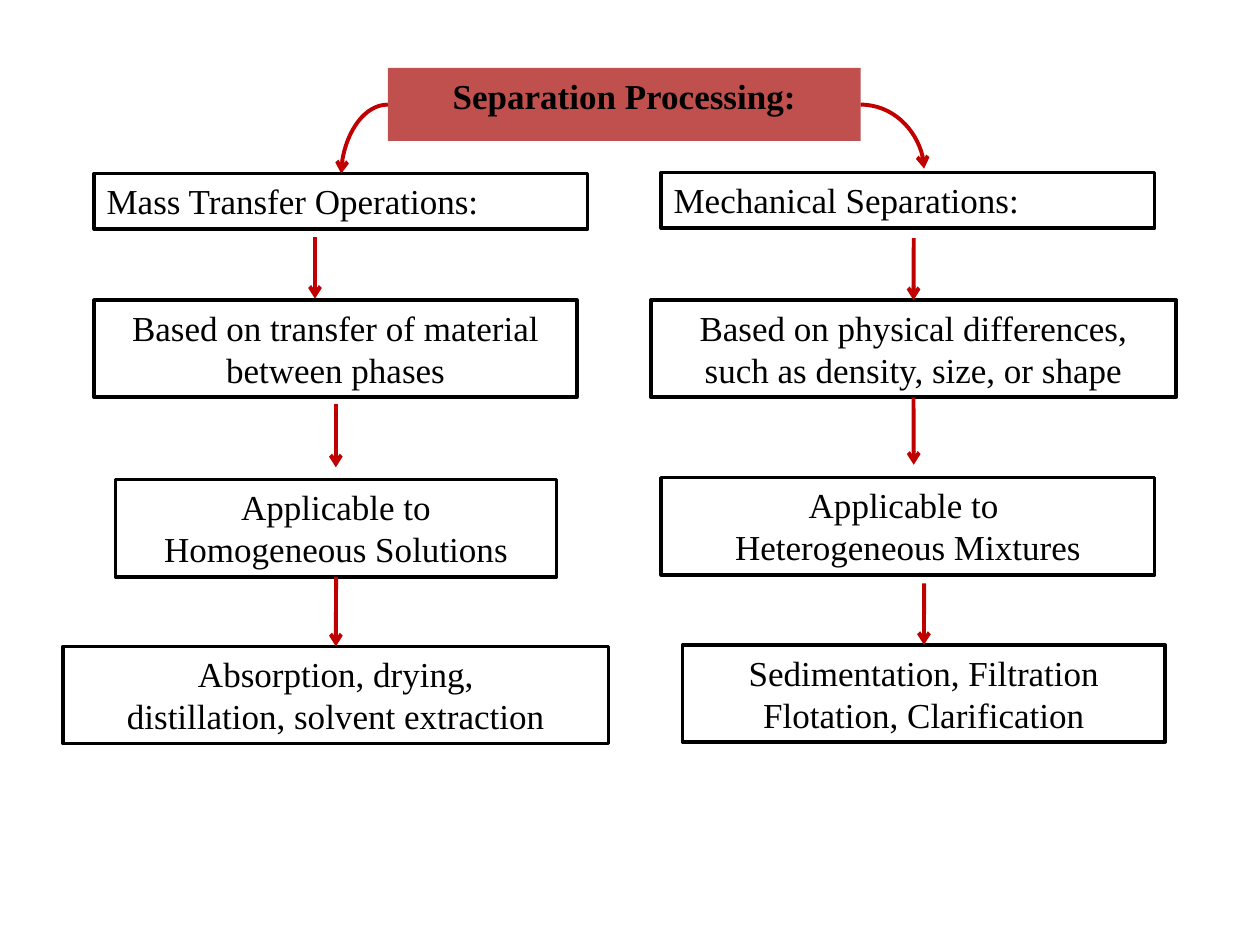
"""Build the separation processing flow chart slide."""
from lxml import etree
from pptx import Presentation
from pptx.dml.color import RGBColor
from pptx.enum.shapes import MSO_CONNECTOR
from pptx.enum.text import MSO_ANCHOR, MSO_AUTO_SIZE, PP_ALIGN
from pptx.oxml.ns import qn
from pptx.util import Cm, Pt

STRAIGHT, CURVE = MSO_CONNECTOR.STRAIGHT, MSO_CONNECTOR.CURVE
LEFT, CENTER = PP_ALIGN.LEFT, PP_ALIGN.CENTER
TOP_SIDE, BOTTOM_SIDE = 0, 2
FONT, SIZE = "Times New Roman", 20
COLORS = {"title": "C0504D", "box": "FFFFFF", "ink": "000000", "arrow": "C00000"}

TITLE = ("Separation Processing:", (7.82, 1.37, 9.53, 1.47))
LINE_HEIGHTS = {1: 1.12, 2: 1.96}

# name: left, top, width, line count, alignment, paragraphs
BOXES = {
    "mass": (1.9, 3.5, 9.95, 1, LEFT, ["Mass Transfer Operations:"]),
    "transfer": (1.9, 6.05, 9.73, 2, CENTER,
                 ["Based on transfer of material between phases"]),
    "homogeneous": (2.33, 9.67, 8.89, 2, CENTER,
                    ["Applicable to", "Homogeneous Solutions"]),
    "absorption": (1.27, 13.03, 11, 2, CENTER,
                   ["Absorption, drying,", "distillation, solvent extraction"]),
    "mechanical": (13.33, 3.48, 9.95, 1, LEFT, ["Mechanical Separations:"]),
    "physical": (13.12, 6.05, 10.59, 2, CENTER,
                 ["Based on physical differences, such as density, size, or shape"]),
    "heterogeneous": (13.33, 9.63, 9.95, 2, CENTER,
                      ["Applicable to ", "Heterogeneous Mixtures"]),
    "sedimentation": (13.76, 13, 9.73, 2, CENTER,
                      ["Sedimentation, Filtration", "Flotation, Clarification"]),
}

CURVES = [(7.82, 2.11, 6.88, 3.5), (17.35, 2.11, 18.63, 3.4)]

# x, top, bottom, box joined at the start, box joined at the end
ARROWS = [
    (6.35, 4.78, 6.02, None, None),
    (6.77, 8.15, 9.42, None, None),
    (6.77, 11.63, 13.03, "homogeneous", "absorption"),
    (18.42, 4.8, 6.05, None, "physical"),
    (18.42, 8.01, 9.37, "physical", None),
    (18.63, 11.76, 13, None, "sedimentation"),
]


def rgb(name):
    return RGBColor.from_string(COLORS[name])


def write(tf, lines, align, bold=False):
    tf.word_wrap = True
    tf.auto_size = MSO_AUTO_SIZE.NONE
    tf.vertical_anchor = MSO_ANCHOR.TOP
    for i, line in enumerate(lines):
        p = tf.add_paragraph() if i else tf.paragraphs[0]
        p.alignment = align
        p.space_before = Pt(0)
        r = p.add_run()
        r.text = line
        r.font.name, r.font.size, r.font.bold = FONT, Pt(SIZE), bold
        r.font.color.rgb = rgb("ink")


def fill(sp, name):
    sp.fill.solid()
    sp.fill.fore_color.rgb = rgb(name)


def add_box(slide, left, top, width, count, align, lines):
    sp = slide.shapes.add_textbox(Cm(left), Cm(top), Cm(width), Cm(LINE_HEIGHTS[count]))
    fill(sp, "box")
    sp.line.color.rgb = rgb("ink")
    sp.line.width = Pt(2)
    write(sp.text_frame, lines, align)
    return sp


def add_arrow(slide, kind, *ends):
    cxn = slide.shapes.add_connector(kind, *map(Cm, ends))
    cxn.line.color.rgb = rgb("arrow")
    cxn.line.width = Pt(2.25)
    etree.SubElement(cxn.line._get_or_add_ln(), qn("a:tailEnd"), type="arrow")
    props = cxn._element.spPr
    etree.SubElement(props, qn("a:effectLst"))
    if kind == CURVE:
        props.find(qn("a:prstGeom")).set("prst", "curvedConnector2")
    return cxn


def main():
    prs = Presentation()
    prs.slide_width, prs.slide_height = Cm(25.4), Cm(19.05)
    slide = prs.slides.add_slide(prs.slide_layouts[5])

    text, place = TITLE
    title = slide.shapes.title
    title.left, title.top, title.width, title.height = map(Cm, place)
    fill(title, "title")
    write(title.text_frame, [text], CENTER, bold=True)

    boxes = {name: add_box(slide, *box) for name, box in BOXES.items()}
    for ends in CURVES:
        add_arrow(slide, CURVE, *ends)
    for x, top, bottom, start, end in ARROWS:
        cxn = add_arrow(slide, STRAIGHT, x, top, x, bottom)
        if start:
            cxn.begin_connect(boxes[start], BOTTOM_SIDE)
        if end:
            cxn.end_connect(boxes[end], TOP_SIDE)
    prs.save("out.pptx")


if __name__ == "__main__":
    main()
